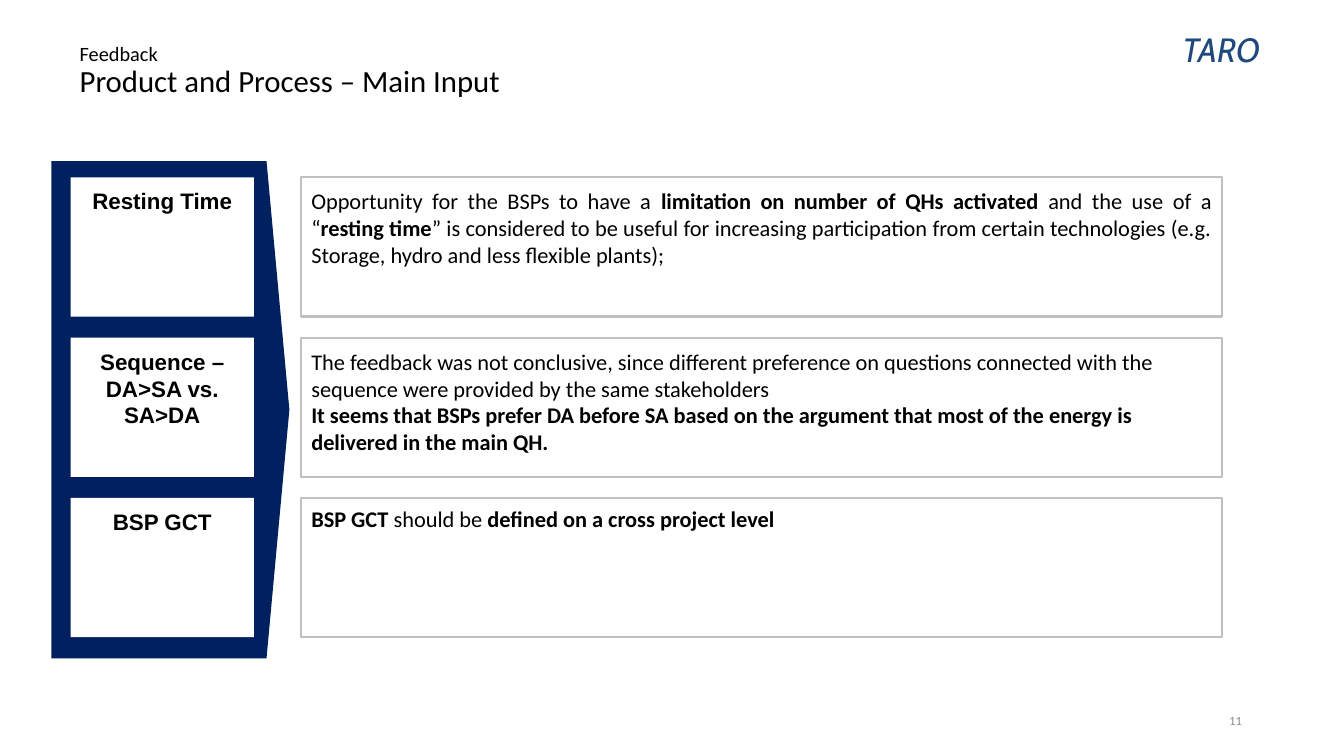
"""Build the feedback slide on the main input for product and process."""
from dataclasses import dataclass

from pptx import Presentation
from pptx.dml.color import RGBColor
from pptx.enum.shapes import MSO_SHAPE
from pptx.enum.text import MSO_ANCHOR, MSO_AUTO_SIZE, PP_ALIGN
from pptx.shapes.autoshape import Shape
from pptx.slide import Slide
from pptx.text.text import Font
from pptx.util import Pt

BLACK, WHITE, NAVY, SILVER = "000000", "FFFFFF", "002060", "C0C0C0"
FIRST_TOP, ROW_PITCH, ROW_HEIGHT = 126.7, 114.5, 99.4
LABEL_LEFT, LABEL_WIDTH = 50.4, 131
INPUT_LEFT, INPUT_WIDTH = 215.3, 657.4


@dataclass(frozen=True)
class Span:
    text: str
    bold: bool = False


@dataclass(frozen=True)
class FeedbackRow:
    label: list[list[Span]]
    findings: list[list[Span]]
    align: PP_ALIGN = PP_ALIGN.JUSTIFY
    line_spacing: float = 1.0
    space_after: float = 0


ROWS = [
    FeedbackRow(
        [[Span("Resting Time", True)]],
        [[
            Span("Opportunity for the BSPs to have a "),
            Span("limitation on number of QHs activated", True),
            Span(" and the use of a “"),
            Span("resting time", True),
            Span("” is considered to be useful for increasing participation from certain "
                 "technologies (e.g. Storage, hydro and less flexible plants);"),
        ]],
        space_after=6,
    ),
    FeedbackRow(
        [[Span("Sequence – DA>SA vs.", True)], [Span("SA>DA", True)]],
        [
            [Span("The feedback was not conclusive, since different preference on questions "
                  "connected with the sequence were provided by the same stakeholders")],
            [Span("It seems that BSPs prefer DA before SA based on the argument that most of "
                  "the energy is delivered in the main QH.", True)],
        ],
        align=PP_ALIGN.LEFT,
    ),
    FeedbackRow(
        [[Span("BSP GCT", True)]],
        [[Span("BSP GCT", True), Span(" should be "),
          Span("defined on a cross project level", True)]],
        line_spacing=0.9,
    ),
]


def color(value: str) -> RGBColor:
    """Turn a hex string into a colour."""
    return RGBColor.from_string(value)


def style_font(font: Font, name: str, size: float, value: str = BLACK) -> None:
    """Set the typeface, size and colour of a font."""
    font.name = name
    font.size = Pt(size)
    font.color.rgb = color(value)


def add_block(slide: Slide, kind: MSO_SHAPE, left: float, top: float, width: float,
              height: float, fill: str | None = None, line: str | None = None) -> Shape:
    """Add a flat shape with an optional fill and outline."""
    shape = slide.shapes.add_shape(kind, Pt(left), Pt(top), Pt(width), Pt(height))
    shape.shadow.inherit = False
    if fill:
        shape.fill.solid()
        shape.fill.fore_color.rgb = color(fill)
    else:
        shape.fill.background()
    if line:
        shape.line.color.rgb = color(line)
        shape.line.width = Pt(1.5)
    else:
        shape.line.fill.background()
    return shape


def write_paragraphs(shape: Shape, paragraphs: list[list[Span]], font_name: str,
                     align: PP_ALIGN, line_spacing: float = 1.0,
                     space_after: float = 0) -> None:
    """Fill a box from the top with paragraphs of plain and bold spans."""
    frame = shape.text_frame
    frame.word_wrap = True
    frame.vertical_anchor = MSO_ANCHOR.TOP
    frame.margin_left = frame.margin_right = Pt(7.2)
    frame.margin_top = frame.margin_bottom = Pt(7.2)
    for index, spans in enumerate(paragraphs):
        paragraph = frame.add_paragraph() if index else frame.paragraphs[0]
        paragraph.alignment = align
        paragraph.line_spacing = line_spacing
        paragraph.space_after = Pt(space_after)
        style_font(paragraph.font, font_name, 16)
        for span in spans:
            run = paragraph.add_run()
            run.text = span.text
            run.font.bold = span.bold


def add_feedback_row(slide: Slide, row: FeedbackRow, top: float) -> None:
    """Draw one topic label and its findings box."""
    findings = add_block(slide, MSO_SHAPE.RECTANGLE, INPUT_LEFT, top, INPUT_WIDTH,
                         ROW_HEIGHT, line=SILVER)
    write_paragraphs(findings, row.findings, "Calibri", row.align,
                     row.line_spacing, row.space_after)
    label = add_block(slide, MSO_SHAPE.RECTANGLE, LABEL_LEFT, top, LABEL_WIDTH,
                      ROW_HEIGHT, fill=WHITE)
    write_paragraphs(label, row.label, "Arial", PP_ALIGN.CENTER)


def add_title(slide: Slide) -> None:
    """Place the title with its smaller heading line."""
    title = slide.shapes.title
    title.left, title.top, title.width, title.height = Pt(49.7), Pt(26), Pt(716.4), Pt(50.4)
    frame = title.text_frame
    frame.auto_size = MSO_AUTO_SIZE.NONE
    frame.vertical_anchor = MSO_ANCHOR.MIDDLE
    paragraph = frame.paragraphs[0]
    paragraph.alignment = PP_ALIGN.LEFT
    paragraph.line_spacing = 0.9
    style_font(paragraph.font, "Calibri", 22)
    heading = paragraph.add_run()
    heading.text = "Feedback"
    heading.font.size = Pt(14.5)
    paragraph.add_line_break()
    paragraph.add_run().text = "Product and Process – Main Input"


def add_corner_text(slide: Slide, text: str, left: float, top: float, width: float,
                    height: float, anchor: MSO_ANCHOR) -> Font:
    """Add right-aligned text and return its font."""
    box = slide.shapes.add_textbox(Pt(left), Pt(top), Pt(width), Pt(height))
    box.text_frame.word_wrap = True
    box.text_frame.vertical_anchor = anchor
    paragraph = box.text_frame.paragraphs[0]
    paragraph.text = text
    paragraph.alignment = PP_ALIGN.RIGHT
    return paragraph.font


def main() -> None:
    """Build and save the presentation."""
    presentation = Presentation()
    presentation.slide_width, presentation.slide_height = Pt(960), Pt(540)
    slide = presentation.slides.add_slide(presentation.slide_layouts[5])
    add_title(slide)
    project_font = add_corner_text(slide, "TARO", 646, 17.3, 261, 36, MSO_ANCHOR.TOP)
    style_font(project_font, "Cabin", 24, "1F497D")
    project_font.italic = True
    number_font = add_corner_text(slide, "11", 678.2, 500.4, 216, 28.8, MSO_ANCHOR.MIDDLE)
    style_font(number_font, "Calibri", 9, "8C8C8C")
    arrow = add_block(slide, MSO_SHAPE.PENTAGON, 36.7, 115.2, 170, 355, fill=NAVY)
    arrow.adjustments[0] = 0.096
    for index, row in enumerate(ROWS):
        add_feedback_row(slide, row, FIRST_TOP + index * ROW_PITCH)
    presentation.save("out.pptx")


if __name__ == "__main__":
    main()
